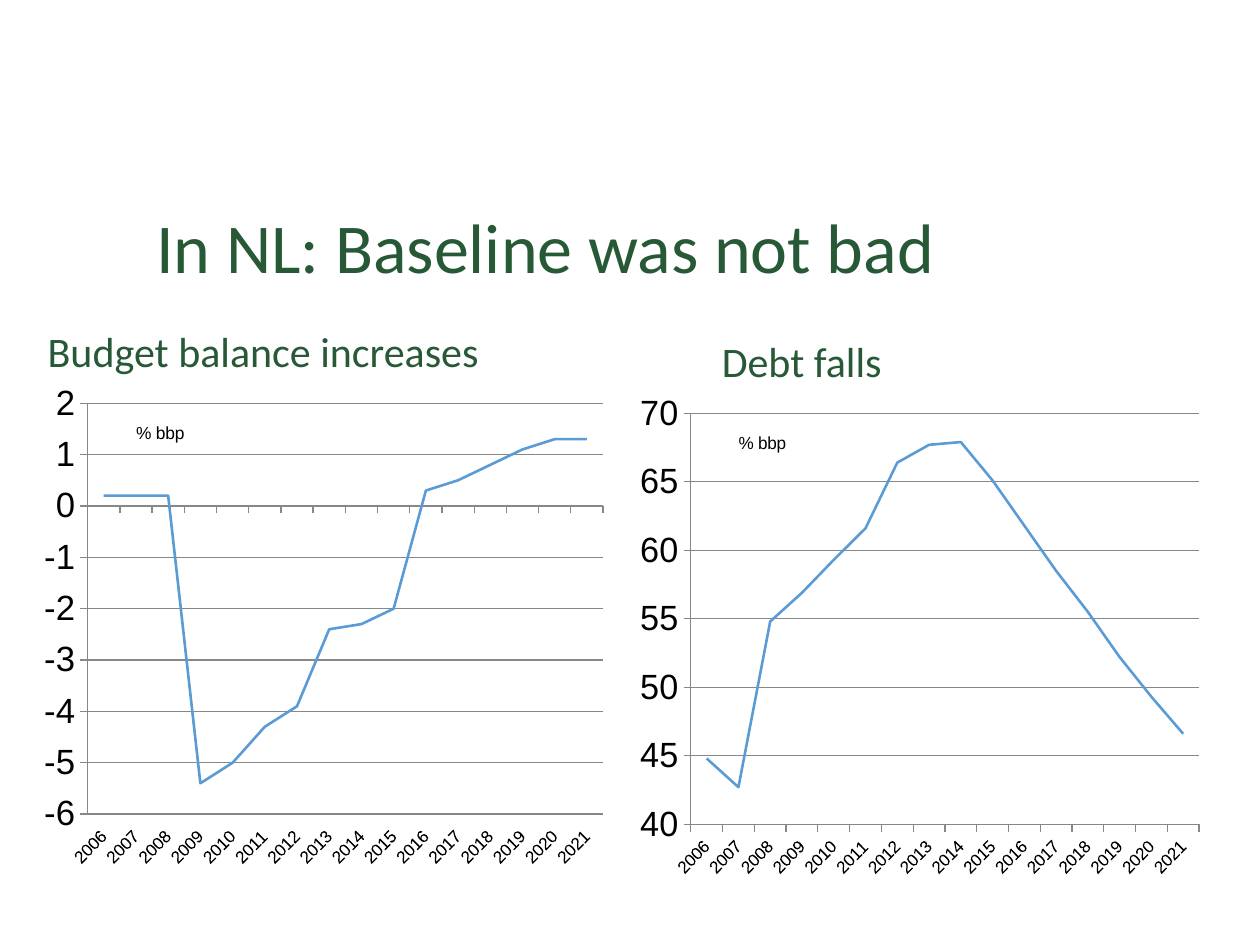
from dataclasses import dataclass

from lxml import etree
from pptx import Presentation
from pptx import util as u
from pptx.chart.data import CategoryChartData
from pptx.dml.color import RGBColor
from pptx.enum import chart as charts
from pptx.enum import text
from pptx.oxml import ns


@dataclass(frozen=True)
class Theme:
    heading_font: str = "Calibri"
    chart_font: str = "Arial"
    heading: str = "275937"
    ink: str = "000000"
    curve: str = "5B9BD5"
    grid: str = "878787"
    title_size: float = 40
    subtitle_size: float = 24
    value_size: float = 20
    label_size: float = 10


@dataclass(frozen=True)
class Area:
    left: float
    top: float
    width: float
    height: float


@dataclass(frozen=True)
class Heading:
    words: str
    area: Area
    size: float
    indent: float = 0.1


@dataclass(frozen=True)
class Scale:
    low: float
    high: float
    step: float


@dataclass(frozen=True)
class Panel:
    heading: Heading
    area: Area
    scale: Scale
    values: tuple[float, ...]


THEME = Theme()
WIDTH, HEIGHT = u.Inches(10), u.Inches(7.5)
YEARS = [str(year) for year in range(2006, 2022)]
UNIT = "% bbp"
PLOT = {"x": 0.069, "y": 0.034, "w": 0.919, "h": 0.691}
UNIT_PLACE = {"x": 0.15, "y": 0.06}


def inches_area(left: float, top: float, width: float, height: float) -> Area:
    return Area(left / 10, top / 7.5, width / 10, height / 7.5)


TITLE = Heading("In NL: Baseline was not bad",
                inches_area(0.12, 1.39, 9.76, 1.2), THEME.title_size, 1.12)
PANELS = (
    Panel(
        Heading("Budget balance increases",
                inches_area(0.28, 2.49, 5.75, 0.63), THEME.subtitle_size),
        inches_area(0.35, 3.04, 4.49, 4.72),
        Scale(-6, 2, 1),
        (0.2, 0.2, 0.2, -5.4, -5, -4.3, -3.9, -2.4,
         -2.3, -2, 0.3, 0.5, 0.8, 1.1, 1.3, 1.3),
    ),
    Panel(
        Heading("Debt falls",
                inches_area(5.63, 2.57, 5.75, 0.63), THEME.subtitle_size),
        inches_area(5.08, 3.12, 4.49, 4.72),
        Scale(40, 70, 5),
        (44.8, 42.7, 54.8, 56.9, 59.3, 61.6, 66.4, 67.7,
         67.9, 65.1, 61.8, 58.5, 55.5, 52.2, 49.3, 46.6),
    ),
)


def place(area: Area) -> tuple[int, int, int, int]:
    return (round(area.left * WIDTH), round(area.top * HEIGHT),
            round(area.width * WIDTH), round(area.height * HEIGHT))


def style_font(font, name: str, size: float, color: str) -> None:
    font.name = name
    font.size = u.Pt(size)
    font.bold = False
    font.color.rgb = RGBColor.from_string(color)


def style_line(line, color: str, width: float) -> None:
    line.color.rgb = RGBColor.from_string(color)
    line.width = u.Pt(width)


def add_heading(page, heading: Heading) -> None:
    box = page.shapes.add_textbox(*place(heading.area))
    frame = box.text_frame
    frame.word_wrap = True
    frame.vertical_anchor = text.MSO_ANCHOR.MIDDLE
    frame.margin_left = u.Inches(heading.indent)
    para = frame.paragraphs[0]
    para.line_spacing = 0.9
    span = para.add_run()
    span.text = heading.words
    style_font(span.font, THEME.heading_font, heading.size, THEME.heading)


def set_layout(parent, index: int, place_by: dict[str, float],
               inner: bool = False) -> None:
    for old in parent.findall(ns.qn("c:layout")):
        parent.remove(old)
    layout = etree.Element(ns.qn("c:layout"))
    manual = etree.SubElement(layout, ns.qn("c:manualLayout"))
    settings = {"layoutTarget": "inner"} if inner else {}
    settings |= {"xMode": "edge", "yMode": "edge"}
    settings |= {key: str(share) for key, share in place_by.items()}
    for key, value in settings.items():
        etree.SubElement(manual, ns.qn(f"c:{key}")).set("val", value)
    parent.insert(index, layout)


def style_axis(axis, size: float) -> None:
    style_font(axis.tick_labels.font, THEME.chart_font, size, THEME.ink)
    style_line(axis.format.line, THEME.grid, 0.75)
    axis.major_tick_mark = charts.XL_TICK_MARK.OUTSIDE
    axis.minor_tick_mark = charts.XL_TICK_MARK.NONE


def add_unit(axis) -> None:
    para = axis.axis_title.text_frame.paragraphs[0]
    span = para.add_run()
    span.text = UNIT
    style_font(span.font, THEME.chart_font, THEME.label_size, THEME.ink)


def add_panel(page, panel: Panel) -> None:
    add_heading(page, panel.heading)
    data = CategoryChartData()
    data.categories = YEARS
    data.add_series("Series 1", panel.values)
    chart = page.shapes.add_chart(
        charts.XL_CHART_TYPE.LINE, *place(panel.area), data).chart
    chart.has_legend = False
    chart.has_title = False
    style_font(chart.font, THEME.chart_font, THEME.value_size, THEME.ink)

    years, amounts = chart.category_axis, chart.value_axis
    style_axis(years, THEME.label_size)
    years.tick_label_position = charts.XL_TICK_LABEL_POSITION.LOW
    style_axis(amounts, THEME.value_size)
    amounts.minimum_scale = panel.scale.low
    amounts.maximum_scale = panel.scale.high
    amounts.major_unit = panel.scale.step
    amounts.has_major_gridlines = True
    style_line(amounts.major_gridlines.format.line, THEME.grid, 0.75)
    add_unit(amounts)

    plot = chart.plots[0]
    plot.vary_by_categories = False
    series = plot.series[0]
    series.smooth = False
    series.marker.style = charts.XL_MARKER_STYLE.NONE
    style_line(series.format.line, THEME.curve, 1.5)

    root = chart.element
    set_layout(root.xpath(".//c:plotArea")[0], 0, PLOT, inner=True)
    set_layout(root.xpath(".//c:valAx/c:title")[0], 1, UNIT_PLACE)
    root.xpath(".//c:valAx/c:title//a:bodyPr")[0].set("rot", "0")
    root.xpath(".//c:catAx/c:txPr/a:bodyPr")[0].set("rot", "-2700000")


def main() -> None:
    deck = Presentation()
    deck.slide_width, deck.slide_height = WIDTH, HEIGHT
    page = deck.slides.add_slide(deck.slide_layouts[6])
    add_heading(page, TITLE)
    for panel in PANELS:
        add_panel(page, panel)
    deck.save("out.pptx")


if __name__ == "__main__":
    main()
